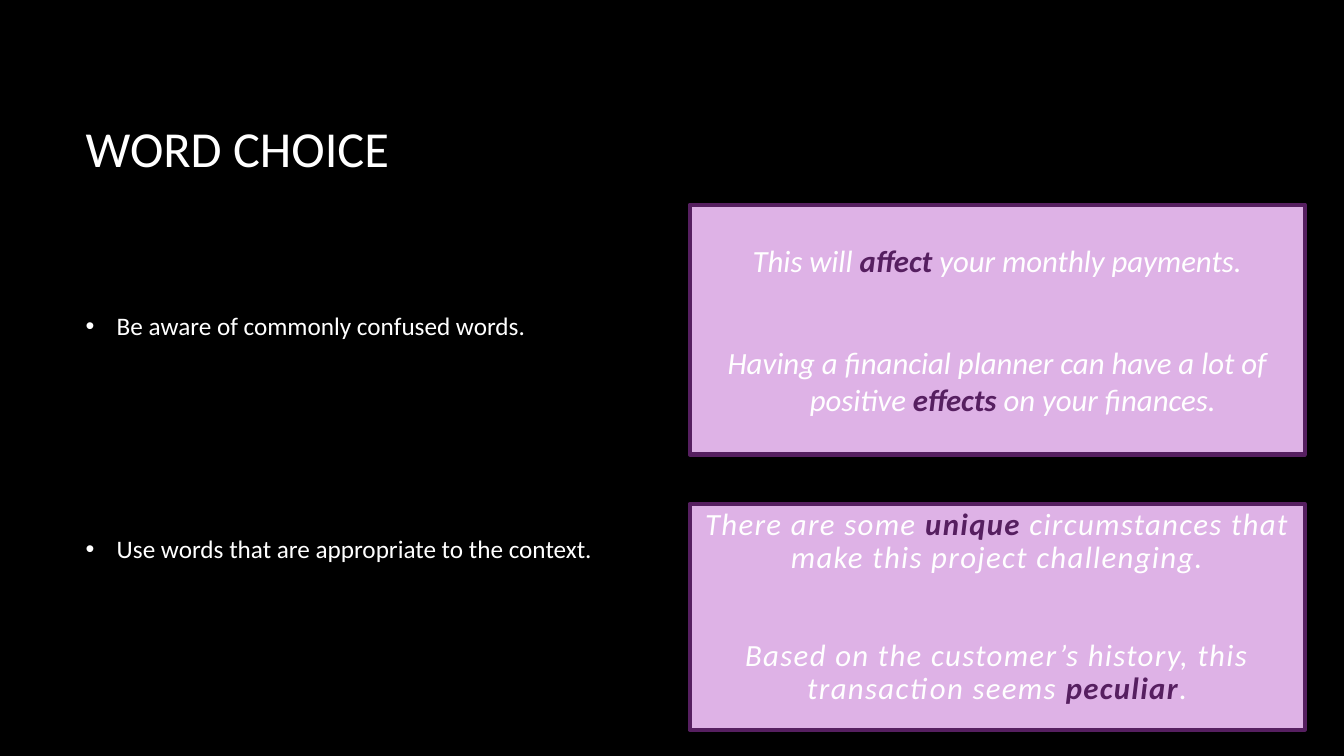
from lxml.etree import SubElement
from pptx import Presentation
from pptx.dml.color import RGBColor
from pptx.enum.shapes import MSO_SHAPE
from pptx.enum.text import MSO_ANCHOR, MSO_AUTO_SIZE, PP_ALIGN
from pptx.oxml.ns import qn
from pptx.util import Inches, Pt

BLACK = RGBColor(0x00, 0x00, 0x00)
WHITE = RGBColor(0xFF, 0xFF, 0xFF)
LILAC = RGBColor(0xDE, 0xB2, 0xE6)
PURPLE = RGBColor(0x56, 0x1F, 0x60)
FONT = "Calibri"
HANGING = Inches(0.31)
EXAMPLE_LEFT, EXAMPLE_WIDTH = 6.84, 6.1

ADVICE = [
    "Be aware of commonly confused words.",
    "Use words that are appropriate to the context.",
]
# Each example: text before the key word, the key word, text after it
CONFUSED_WORDS = [
    ("This will ", "affect", " your monthly payments."),
    ("Having a financial planner can have a lot of positive ", "effects",
     " on your finances."),
]
CONTEXT_WORDS = [
    ("There are some ", "unique",
     " circumstances that make this project challenging."),
    ("Based on the customer’s history, this transaction seems ", "peculiar", "."),
]


def add_run(paragraph, text, size, color=WHITE, bold=False, italic=False):
    run = paragraph.add_run()
    run.text = text
    font = run.font
    font.name, font.size = FONT, Pt(size)
    font.bold, font.italic = bold, italic
    font.color.rgb = color
    return run


def add_paragraphs(text_frame, count, gap):
    """Return count paragraphs, each gap points below the one before."""
    paragraphs = [text_frame.paragraphs[0]]
    while len(paragraphs) < count:
        paragraph = text_frame.add_paragraph()
        paragraph.space_before = Pt(gap)
        paragraphs.append(paragraph)
    return paragraphs


def set_hanging_indent(paragraph):
    properties = paragraph._p.get_or_add_pPr()
    properties.set("marL", str(HANGING))
    properties.set("indent", str(-HANGING))
    return properties


def add_bullet(paragraph):
    properties = set_hanging_indent(paragraph)
    color = SubElement(properties, qn("a:buClr"))
    SubElement(color, qn("a:srgbClr"), val=str(WHITE))
    SubElement(properties, qn("a:buFont"), typeface="Arial")
    SubElement(properties, qn("a:buChar"), char="•")


def set_title(slide, text):
    title = slide.shapes.title
    title.left, title.top = Inches(0.75), Inches(0.67)
    title.width, title.height = Inches(11.08), Inches(1.59)
    text_frame = title.text_frame
    text_frame.auto_size = MSO_AUTO_SIZE.NONE
    text_frame.vertical_anchor = MSO_ANCHOR.MIDDLE
    paragraph = text_frame.paragraphs[0]
    paragraph.alignment = PP_ALIGN.LEFT
    add_run(paragraph, text, 36)


def add_advice(slide, items):
    box = slide.shapes.add_textbox(
        Inches(0.75), Inches(2.34), Inches(5.46), Inches(3.99))
    text_frame = box.text_frame
    text_frame.word_wrap = True
    text_frame.vertical_anchor = MSO_ANCHOR.MIDDLE
    paragraphs = add_paragraphs(text_frame, len(items), gap=138)
    for paragraph, item in zip(paragraphs, items):
        add_bullet(paragraph)
        add_run(paragraph, item, 18)


def add_examples(slide, top, height, examples, gap, anchor,
                 hanging=False, line_spacing=1.0, letter_spacing=0):
    box = slide.shapes.add_shape(
        MSO_SHAPE.RECTANGLE, Inches(EXAMPLE_LEFT), Inches(top),
        Inches(EXAMPLE_WIDTH), Inches(height))
    box.shadow.inherit = False
    box.fill.solid()
    box.fill.fore_color.rgb = LILAC
    box.line.color.rgb = PURPLE
    box.line.width = Pt(3)
    text_frame = box.text_frame
    text_frame.word_wrap = True
    text_frame.vertical_anchor = anchor
    paragraphs = add_paragraphs(text_frame, len(examples), gap)
    for paragraph, (before, key_word, after) in zip(paragraphs, examples):
        paragraph.alignment = PP_ALIGN.CENTER
        paragraph.line_spacing = line_spacing
        if hanging:
            set_hanging_indent(paragraph)
        runs = [
            add_run(paragraph, before, 22, italic=True),
            add_run(paragraph, key_word, 22, PURPLE, bold=True, italic=True),
            add_run(paragraph, after, 22, italic=True),
        ]
        if letter_spacing:
            for run in runs:
                run.font._element.set("spc", str(letter_spacing * 100))


def main():
    presentation = Presentation()
    presentation.slide_width = Inches(13.33)
    presentation.slide_height = Inches(7.5)
    slide = presentation.slides.add_slide(presentation.slide_layouts[5])
    slide.background.fill.solid()
    slide.background.fill.fore_color.rgb = BLACK

    # Title and advice
    set_title(slide, "WORD CHOICE")
    add_advice(slide, ADVICE)

    # Example boxes
    add_examples(slide, 2.03, 2.48, CONFUSED_WORDS, gap=47,
                 anchor=MSO_ANCHOR.MIDDLE, hanging=True)
    add_examples(slide, 5, 2.24, CONTEXT_WORDS, gap=46,
                 anchor=MSO_ANCHOR.TOP, line_spacing=0.9, letter_spacing=1)

    presentation.save("out.pptx")


if __name__ == "__main__":
    main()
